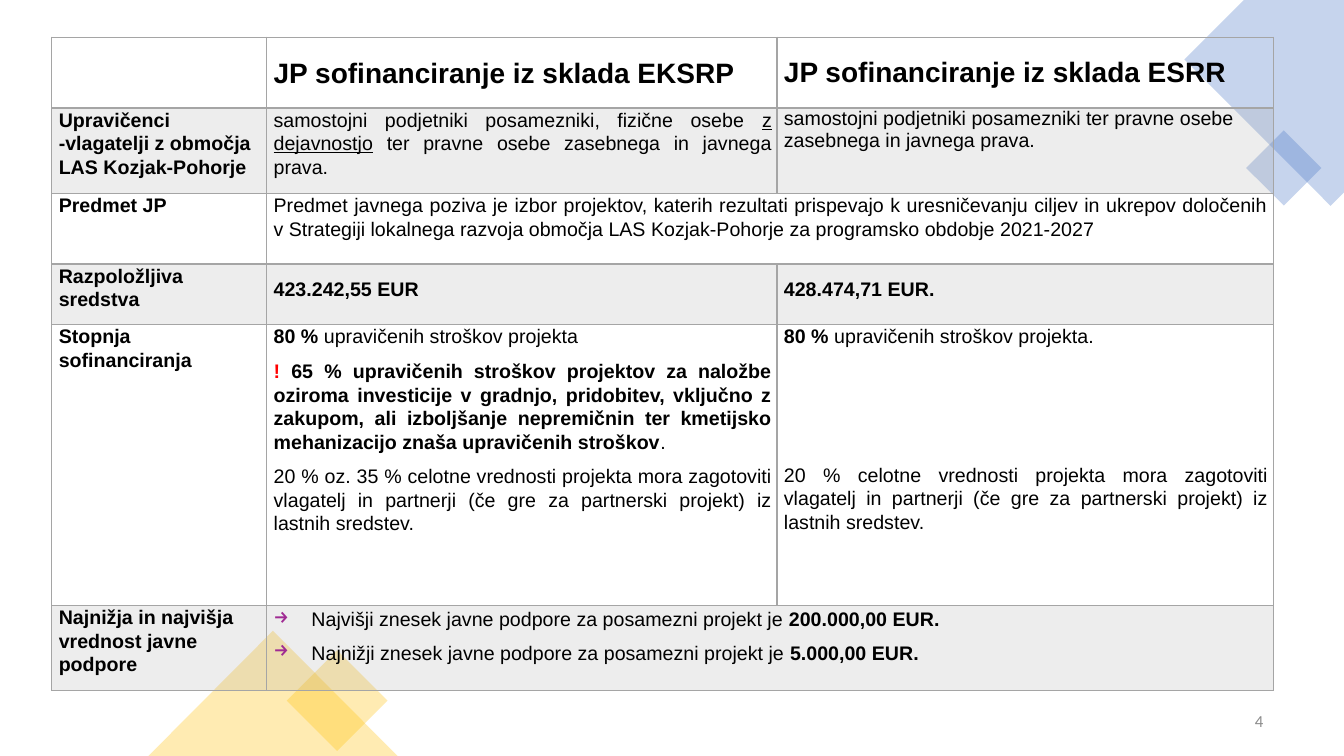
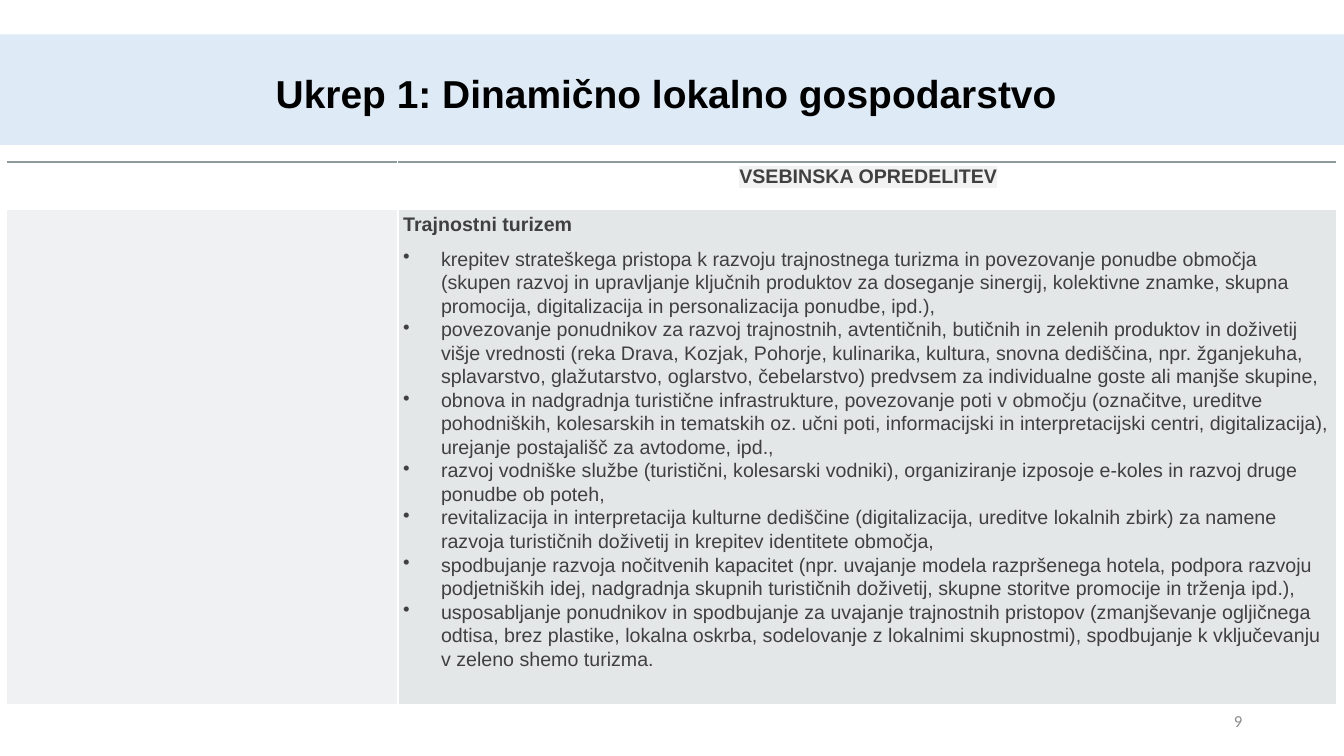
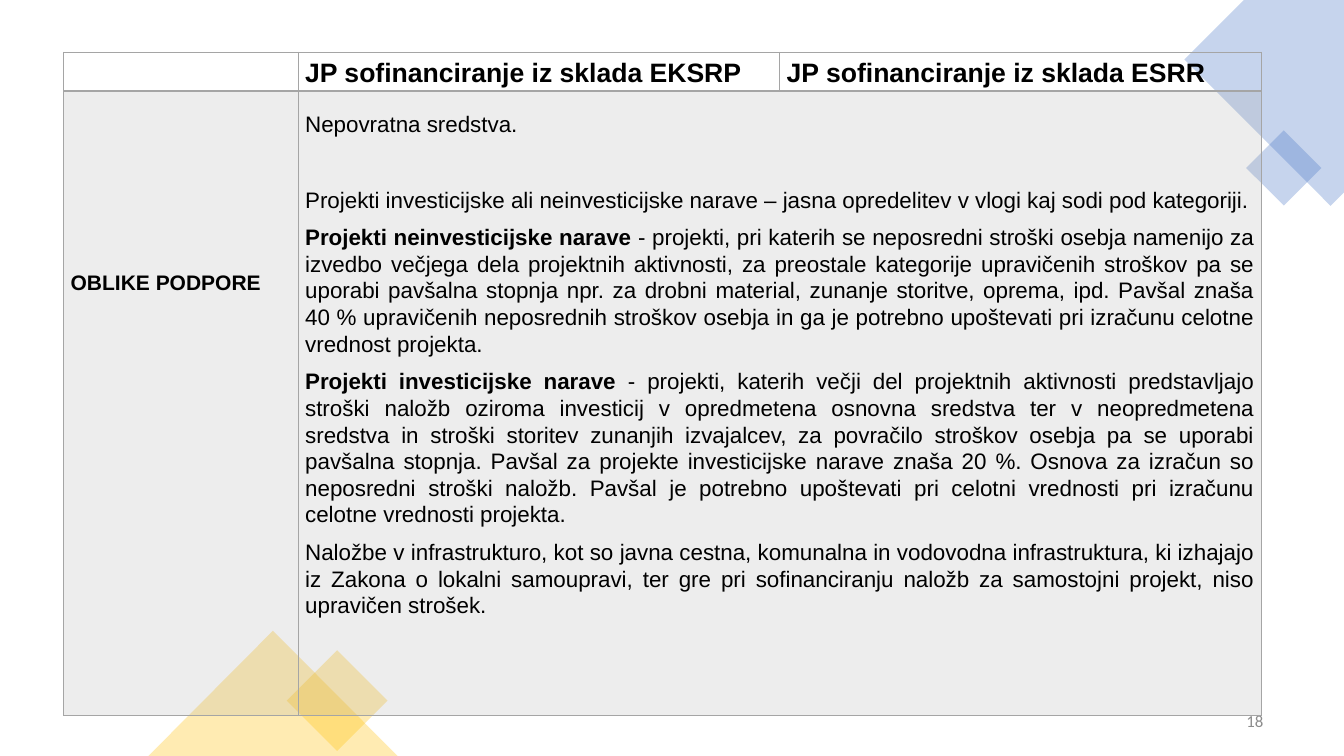
from lxml import etree
from pptx import Presentation
from pptx.dml.color import RGBColor
from pptx.enum import shapes, text
from pptx.oxml.ns import qn
from pptx.util import Pt

BLACK = RGBColor(0x00, 0x00, 0x00)
DARK = RGBColor(0x40, 0x40, 0x40)
GRAY = RGBColor(0x8C, 0x8C, 0x8C)
RULE = RGBColor(0xA5, 0xA5, 0xA5)
SLATE = RGBColor(0x8F, 0x9A, 0x9D)
STONE = RGBColor(0xB4, 0xBC, 0xBE)
WHITE = RGBColor(0xFF, 0xFF, 0xFF)
PALE = RGBColor(0xF2, 0xF2, 0xF2)
SKY = RGBColor(0xDE, 0xEB, 0xF7)
BLUE = RGBColor(0x44, 0x72, 0xC4)
GOLD = RGBColor(0xFF, 0xC0, 0x00)
RED = RGBColor(0xFF, 0x00, 0x00)
PLUM = RGBColor(0xA0, 0x2B, 0x93)

LEFT, MID, RIGHT, FULL = (text.PP_ALIGN.LEFT, text.PP_ALIGN.CENTER,
                          text.PP_ALIGN.RIGHT, text.PP_ALIGN.JUSTIFY)
TOP, CENTER = text.MSO_ANCHOR.TOP, text.MSO_ANCHOR.MIDDLE
KIND = shapes.MSO_SHAPE


def add(node, tag, **attrs):
    return etree.SubElement(node, qn(tag), attrs)


def fade(node, pct):
    for tint in node.iter(qn("a:srgbClr")):
        add(tint, "a:alpha", val=str(pct * 1000))


class Deck:
    def __init__(self):
        self.prs = Presentation()
        self.prs.slide_width, self.prs.slide_height = Pt(960), Pt(540)
        self.slide = None
        self.face, self.size, self.ink = "Arial", 14, BLACK

    def new(self, size=14, ink=BLACK):
        self.slide = self.prs.slides.add_slide(self.prs.slide_layouts[6])
        self.size, self.ink = size, ink

    def paint(self, shape, color, pct=100):
        shape.shadow.inherit = False
        shape.line.fill.background()
        shape.fill.solid()
        shape.fill.fore_color.rgb = color
        if pct < 100:
            fade(shape.element.spPr, pct)

    def block(self, kind, left, top, wide, high, color, pct=100, turn=0):
        shape = self.slide.shapes.add_shape(
            kind, Pt(left), Pt(top), Pt(wide), Pt(high))
        shape.rotation = turn
        self.paint(shape, color, pct)
        return shape

    def decor(self):
        pen = self.slide.shapes.build_freeform(Pt(960), 0)
        edge = [(888.5, 0), (846, 42.5), (950.4, 147), (960, 137.5)]
        pen.add_line_segments([(Pt(x), Pt(y)) for x, y in edge])
        self.paint(pen.convert_to_shape(), BLUE, 30)
        self.block(KIND.RECTANGLE, 898, 101, 38, 38, BLUE, 30, 45)
        self.block(KIND.RECTANGLE, 215.3, 475, 51, 51, GOLD, 30, 45)
        self.block(KIND.ISOSCELES_TRIANGLE, 106, 450.5, 178, 89.5, GOLD, 30)

    def number(self, num, left=693.5):
        box = self.slide.shapes.add_textbox(
            Pt(left), Pt(500.5), Pt(216), Pt(29))
        box.text_frame.word_wrap = True
        box.text_frame.vertical_anchor = CENTER
        self.para(box.text_frame, num, RIGHT, size=12, lead=1, gap=6,
                  face="Calibri", ink=GRAY)

    def title(self, words):
        band = self.block(KIND.RECTANGLE, 0, 24.5, 960, 79, SKY)
        band.text_frame.margin_top = Pt(8)
        band.text_frame.vertical_anchor = CENTER
        self.para(band.text_frame, [(words, "b")], MID, size=27.8,
                  lead=1, gap=0)
        band.text_frame.paragraphs[0].runs[0].font.color.rgb = BLACK

    def para(self, frame, runs, align=FULL, size=None, lead=1.07, gap=8,
             face=None, ink=None, mark=None, tint=None, glow=None):
        par = frame.paragraphs[0]
        if par.runs:
            par = frame.add_paragraph()
        par.alignment, par.line_spacing = align, lead
        par.space_after = Pt(gap)
        if mark:
            props = par._p.get_or_add_pPr()
            props.set("marL", str(Pt(27)))
            props.set("indent", str(-Pt(27)))
            if tint:
                add(add(props, "a:buClr"), "a:srgbClr", val=str(tint))
            add(props, "a:buChar", char=mark)
        par.font.name = face or self.face
        par.font.size = Pt(size or self.size)
        for words, style in [(runs, "")] if isinstance(runs, str) else runs:
            run = par.add_run()
            run.text = words
            run.font.bold = "b" in style
            run.font.underline = "u" in style
            run.font.color.rgb = RED if "r" in style else ink or self.ink
            if glow:
                add(add(run.font._element, "a:highlight"),
                    "a:srgbClr", val=str(glow))

    def grid(self, left, top, cols, rows, pads):
        table = self.slide.shapes.add_table(
            len(rows), len(cols), Pt(left), Pt(top),
            Pt(sum(cols)), Pt(sum(rows))).table
        table.first_row = table.horz_banding = False
        for col, wide in zip(table.columns, cols):
            col.width = Pt(wide)
        for row, high in zip(table.rows, rows):
            row.height = Pt(high)
        for cell in table.iter_cells():
            cell.fill.background()
            (cell.margin_left, cell.margin_top,
             cell.margin_right, cell.margin_bottom) = map(Pt, pads)
        return table

    def shade(self, cell, color, pct):
        cell.fill.solid()
        cell.fill.fore_color.rgb = color
        fade(cell._tc.get_or_add_tcPr(), pct)

    def edge(self, cell, sides, color, pct=100):
        props = cell._tc.get_or_add_tcPr()
        for spot, (side, wide) in enumerate(sides.items()):
            line = etree.Element(qn("a:ln" + side), w=str(Pt(wide)))
            add(add(line, "a:solidFill"), "a:srgbClr", val=str(color))
            if pct < 100:
                fade(line, pct)
            props.insert(spot, line)

    def rule(self, table, dark):
        for r in range(len(table.rows)):
            for c in range(len(table.columns)):
                cell = table.cell(r, c)
                if r in dark:
                    self.shade(cell, RULE, 20)
                self.edge(cell, {"L": 1, "R": 1, "T": 2 if r == 1 else 1,
                                 "B": 2 if r == 0 else 1}, RULE)

    def put(self, cell, runs, align=FULL, anchor=TOP, **style):
        cell.vertical_anchor = anchor
        self.para(cell.text_frame, runs, align, **style)


def funds(deck):
    deck.new()
    deck.decor()
    deck.number("4")
    table = deck.grid(37, 26.5, [153.5, 364.5, 354.5],
                      [50.5, 57.5, 50.5, 41, 200.5, 58], [5, 0, 3.6, 7.2])
    deck.rule(table, (1, 3, 5))
    for r in (2, 5):
        table.cell(r, 1).merge(table.cell(r, 2))
    at = table.cell
    for c, (fund, lead) in enumerate([("EKSRP", 1.07), ("ESRR", 1)], 1):
        at(0, c).margin_top = Pt(7.2)
        deck.put(at(0, c), [("JP sofinanciranje iz sklada " + fund, "b")],
                 LEFT, CENTER, size=20, lead=lead, gap=8 if c == 1 else 0)
    deck.put(at(1, 0), [("Upravičenci", "b")], LEFT, gap=0)
    heads = ["-vlagatelji z območja LAS Kozjak-Pohorje", "Predmet JP",
             "Razpoložljiva sredstva", "Stopnja sofinanciranja",
             "Najnižja in najvišja vrednost javne podpore"]
    for r, head in enumerate(heads, 1):
        deck.put(at(r, 0), [(head, "b")], LEFT)
    deck.put(at(1, 1), [
        ("samostojni podjetniki posamezniki, fizične osebe ", ""),
        ("z dejavnostjo", "u"),
        (" ter pravne osebe zasebnega in javnega prava.", "")])
    deck.put(at(1, 2), "samostojni podjetniki posamezniki ter pravne osebe "
             "zasebnega in javnega prava.", LEFT, lead=1, gap=0)
    deck.put(at(2, 1), "Predmet javnega poziva je izbor projektov, katerih "
             "rezultati prispevajo k uresničevanju ciljev in ukrepov "
             "določenih v Strategiji lokalnega razvoja območja LAS "
             "Kozjak-Pohorje za programsko obdobje 2021-2027")
    for c, cash in enumerate(["423.242,55 EUR", "428.474,71 EUR."], 1):
        deck.put(at(3, c), [(cash, "b")], anchor=CENTER)
    share = (" celotne vrednosti projekta mora zagotoviti vlagatelj in "
             "partnerji (če gre za partnerski projekt) iz lastnih sredstev.")
    deck.put(at(4, 1), [("80 %", "b"),
                        (" upravičenih stroškov projekta", "")])
    deck.put(at(4, 1), [
        ("!", "br"),
        (" 65 % upravičenih stroškov projektov za naložbe oziroma investicije "
         "v gradnjo, pridobitev, vključno z zakupom, ali izboljšanje "
         "nepremičnin ter kmetijsko mehanizacijo znaša upravičenih stroškov",
         "b"),
        (".", "")])
    deck.put(at(4, 1), "20 % oz. 35 %" + share)
    deck.put(at(4, 2), [("80 %", "b"),
                        (" upravičenih stroškov projekta.", "")], gap=82)
    deck.put(at(4, 2), "20 %" + share)
    for kind, cash, gap in [("Najvišji", "200.000,00 EUR.", 6),
                            ("Najnižji", "5.000,00 EUR.", 0)]:
        deck.put(at(5, 1), [
            (kind + " znesek javne podpore za posamezni projekt je ", ""),
            (cash, "b")], LEFT, lead=1.15, gap=gap, mark="→", tint=PLUM)


def tourism(deck):
    deck.new(ink=DARK)
    deck.title("Ukrep 1: Dinamično lokalno gospodarstvo ")
    deck.number("9", 678.5)
    table = deck.grid(4.5, 115.5, [279.5, 670.5], [34, 348.5],
                      [4, 2, 2, 2])
    head, side, body = table.cell(0, 1), table.cell(1, 0), table.cell(1, 1)
    deck.shade(side, STONE, 20)
    deck.shade(body, STONE, 35)
    for c in range(2):
        deck.edge(table.cell(0, c), {"T": 1.5}, SLATE)
    deck.edge(side, {"R": 1.5}, WHITE)
    deck.edge(body, {"L": 1.5}, WHITE)
    deck.put(head, [("VSEBINSKA OPREDELITEV", "b")], MID, glow=PALE)
    deck.put(body, [("Trajnostni turizem", "b")], LEFT)
    goals = [
        "krepitev strateškega pristopa k razvoju trajnostnega turizma in "
        "povezovanje ponudbe območja (skupen razvoj in upravljanje ključnih "
        "produktov za doseganje sinergij, kolektivne znamke, skupna "
        "promocija, digitalizacija in personalizacija ponudbe, ipd.),",
        "povezovanje ponudnikov za razvoj trajnostnih, avtentičnih, butičnih "
        "in zelenih produktov in doživetij višje vrednosti (reka Drava, "
        "Kozjak, Pohorje, kulinarika, kultura, snovna dediščina, npr. "
        "žganjekuha, splavarstvo, glažutarstvo, oglarstvo, čebelarstvo) "
        "predvsem za individualne goste ali manjše skupine,",
        "obnova in nadgradnja turistične infrastrukture, povezovanje poti v "
        "območju (označitve, ureditve pohodniških, kolesarskih in tematskih "
        "oz. učni poti, informacijski in interpretacijski centri, "
        "digitalizacija), urejanje postajališč za avtodome, ipd.,",
        "razvoj vodniške službe (turistični, kolesarski vodniki), "
        "organiziranje izposoje e-koles in razvoj druge ponudbe ob poteh,",
        "revitalizacija in interpretacija kulturne dediščine (digitalizacija, "
        "ureditve lokalnih zbirk) za namene razvoja turističnih doživetij in "
        "krepitev identitete območja,",
        "spodbujanje razvoja nočitvenih kapacitet (npr. uvajanje modela "
        "razpršenega hotela, podpora razvoju podjetniških idej, nadgradnja "
        "skupnih turističnih doživetij, skupne storitve promocije in trženja "
        "ipd.),",
        "usposabljanje ponudnikov in spodbujanje za uvajanje trajnostnih "
        "pristopov (zmanjševanje ogljičnega odtisa, brez plastike, lokalna "
        "oskrba, sodelovanje z lokalnimi skupnostmi), spodbujanje k "
        "vključevanju v zeleno shemo turizma."]
    for goal in goals:
        deck.put(body, goal, LEFT, gap=0, mark="•")


def support(deck):
    deck.new(size=16)
    deck.decor()
    deck.number("18")
    table = deck.grid(45.5, 37.5, [167.5, 344, 344], [27.5, 446],
                      [5, 0, 5, 0])
    deck.rule(table, (1,))
    side, body = table.cell(1, 0), table.cell(1, 1)
    body.merge(table.cell(1, 2))
    for c, fund in enumerate(["EKSRP", "ESRR"], 1):
        deck.put(table.cell(0, c),
                 [("JP sofinanciranje iz sklada " + fund, "b")],
                 anchor=CENTER, size=19)
    side.margin_top, body.margin_top = Pt(128), Pt(14)
    deck.put(side, [("OBLIKE PODPORE", "b")], size=15)
    deck.put(body, "Nepovratna sredstva.", gap=35)
    deck.put(body, "Projekti investicijske ali neinvesticijske narave – "
             "jasna opredelitev v vlogi kaj sodi pod kategoriji.")
    deck.put(body, [
        ("Projekti neinvesticijske narave ", "b"),
        ("- projekti, pri katerih se neposredni stroški osebja namenijo za "
         "izvedbo večjega dela projektnih aktivnosti, za preostale kategorije "
         "upravičenih stroškov pa se uporabi pavšalna stopnja npr. za drobni "
         "material, zunanje storitve, oprema, ipd. Pavšal znaša 40 % "
         "upravičenih neposrednih stroškov osebja in ga je potrebno "
         "upoštevati pri izračunu celotne vrednost projekta.", "")])
    deck.put(body, [
        ("Projekti investicijske narave ", "b"),
        ("- projekti, katerih večji del projektnih aktivnosti predstavljajo "
         "stroški naložb oziroma investicij v opredmetena osnovna sredstva "
         "ter v neopredmetena sredstva in stroški storitev zunanjih "
         "izvajalcev, za povračilo stroškov osebja pa se uporabi pavšalna "
         "stopnja. Pavšal za projekte investicijske narave znaša 20 %. Osnova "
         "za izračun so neposredni stroški naložb. Pavšal je potrebno "
         "upoštevati pri celotni vrednosti pri izračunu celotne vrednosti "
         "projekta.", "")])
    deck.put(body, "Naložbe v infrastrukturo, kot so javna cestna, "
             "komunalna in vodovodna infrastruktura, ki izhajajo iz Zakona "
             "o lokalni samoupravi, ter gre pri sofinanciranju naložb za "
             "samostojni projekt, niso upravičen strošek.")


def main():
    deck = Deck()
    for build in (funds, tourism, support):
        build(deck)
    deck.prs.save("out.pptx")


if __name__ == "__main__":
    main()
